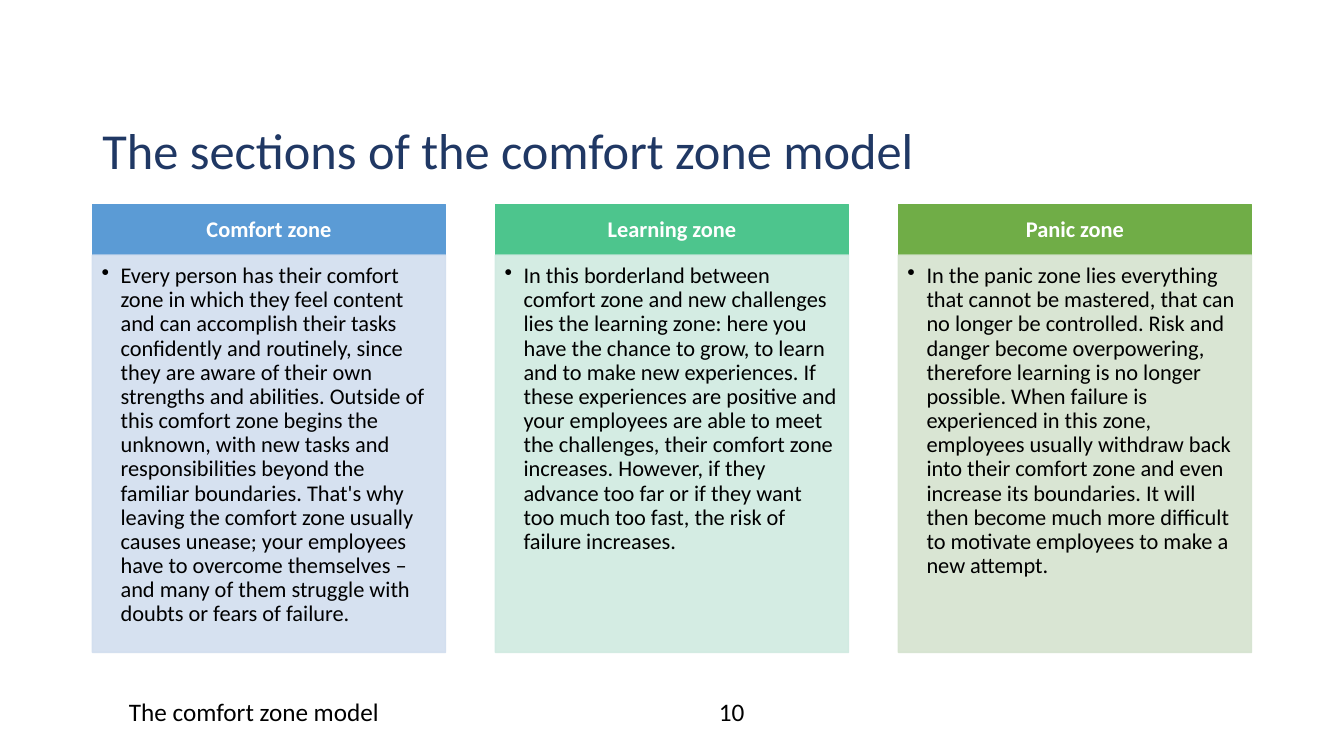
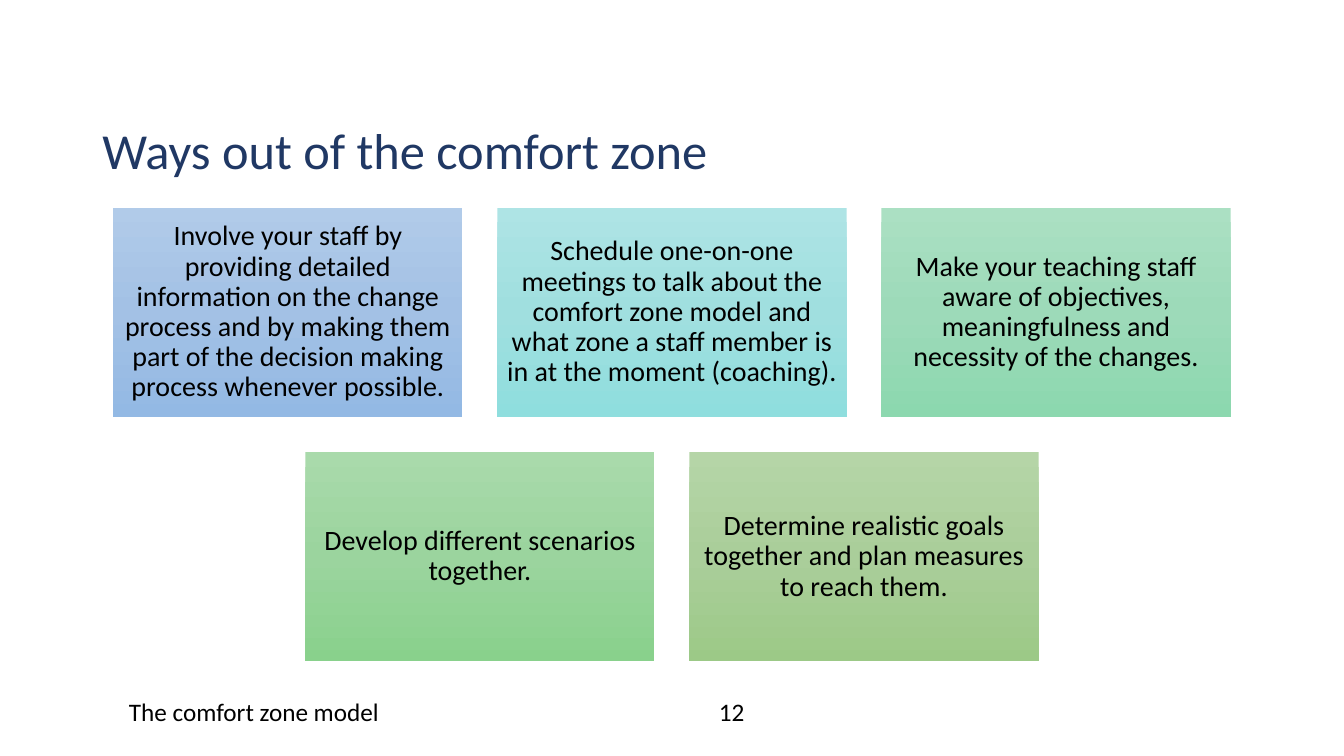
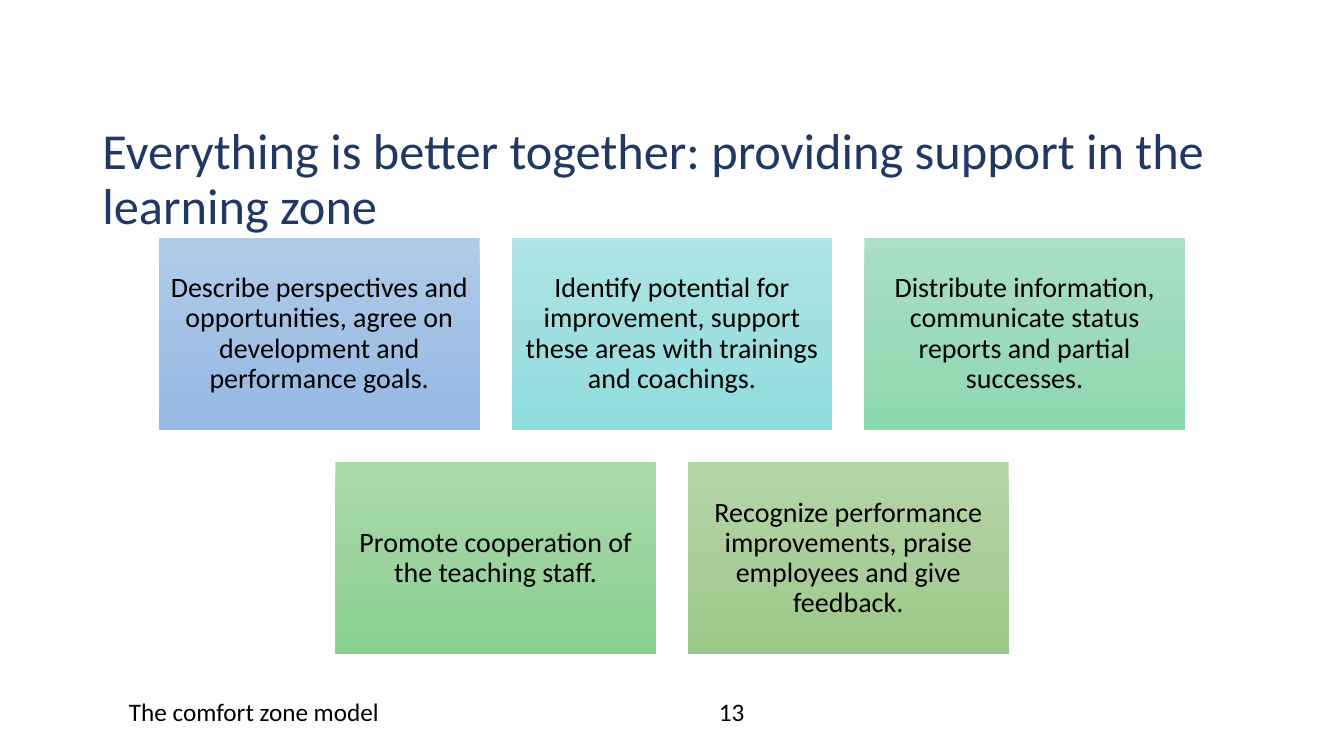
import copy

import pptx
import pptx.dml.color
import pptx.enum.shapes
import pptx.enum.text
import pptx.oxml.ns
import pptx.oxml.xmlchemy
import pptx.util

Cm, Pt = pptx.util.Cm, pptx.util.Pt
ALIGN, ANCHOR = pptx.enum.text.PP_ALIGN, pptx.enum.text.MSO_ANCHOR
qn = pptx.oxml.ns.qn

# Content
FOOTER = "The comfort zone model"
ZONES = [
    ("Comfort zone", "blue", "pale blue",
     "Every person has their comfort zone in which they feel content and can "
     "accomplish their tasks confidently and routinely, since they are aware of "
     "their own strengths and abilities. Outside of this comfort zone begins the "
     "unknown, with new tasks and responsibilities beyond the familiar boundaries. "
     "That's why leaving the comfort zone usually causes unease; your employees "
     "have to overcome themselves – and many of them struggle with doubts or "
     "fears of failure."),
    ("Learning zone", "mint", "pale mint",
     "In this borderland between comfort zone and new challenges lies the learning "
     "zone: here you have the chance to grow, to learn and to make new experiences. "
     "If these experiences are positive and your employees are able to meet the "
     "challenges, their comfort zone increases. However, if they advance too far or "
     "if they want too much too fast, the risk of failure increases."),
    ("Panic zone", "green", "pale green",
     "In the panic zone lies everything that cannot be mastered, that can no longer "
     "be controlled. Risk and danger become overpowering, therefore learning is no "
     "longer possible. When failure is experienced in this zone, employees usually "
     "withdraw back into their comfort zone and even increase its boundaries. It "
     "will then become much more difficult to motivate employees to make a new "
     "attempt."),
]
WAYS = [
    "Involve your staff by providing detailed information on the change process and "
    "by making them part of the decision making process whenever possible.",
    "Schedule one-on-one meetings to talk about the comfort zone model and what zone "
    "a staff member is in at the moment (coaching).",
    "Make your teaching staff aware of objectives, meaningfulness and necessity of "
    "the changes.",
    "Develop different scenarios together.",
    "Determine realistic goals together and plan measures to reach them.",
]
HELP = [
    "Describe perspectives and opportunities, agree on development and performance "
    "goals.",
    "Identify potential for improvement, support these areas with trainings and "
    "coachings.",
    "Distribute information, communicate status reports and partial successes.",
    "Promote cooperation of the teaching staff.",
    "Recognize performance improvements, praise employees and give feedback.",
]
# Title, page number, tile texts, top and tile width in cm
TILED = [
    ("Ways out of the comfort zone", 12, WAYS, 5.23, 8.8),
    ("Everything is better together: providing support in the learning zone", 13,
     HELP, 5.99, 8.08),
]

# Shared style
COLORS = {
    "navy": "203864", "black": "000000", "white": "FFFFFF",
    "blue": "5B9BD5", "mint": "4DC58D", "green": "70AD47",
    "pale blue": "D2DEEF", "pale mint": "D0EAE1", "pale green": "D5E3CF",
}
SHADES = [
    ("B1CBE9", "A3C1E5", "93B9E4"),
    ("AEE4E5", "A0DFDF", "8FDEDE"),
    ("ABE0C3", "9DDAB9", "8CD8AF"),
    ("A9DAAB", "9BD49E", "89D18C"),
    ("B5D5A7", "AACE9A", "9CC987"),
]
WIDE, HIGH = 33.87, 19.05
LEFT, SPAN = 2.33, 29.21


def tint(name):
    return pptx.dml.color.RGBColor.from_string(COLORS.get(name, name))


def apply(thing, vals):
    for key, val in vals.items():
        setattr(thing, key, val)


def add_node(owner, tag, key, val):
    node = pptx.oxml.xmlchemy.OxmlElement(tag)
    node.set(key, val)
    owner.append(node)


def write(shape, text, size, color="black", align=ALIGN.LEFT, anchor=ANCHOR.TOP,
          pads=(0.25, 0.13, 0.25, 0.13), space=0.9, bold=False, bullet=False):
    frame = shape.text_frame
    frame.text = text
    sides = ("margin_left", "margin_top", "margin_right", "margin_bottom")
    apply(frame, dict(zip(sides, map(Cm, pads))))
    apply(frame, {"word_wrap": True, "vertical_anchor": anchor,
                  "auto_size": pptx.enum.text.MSO_AUTO_SIZE.NONE})
    para = frame.paragraphs[0]
    apply(para, {"alignment": align, "line_spacing": space})
    if bullet:
        props = para._p.get_or_add_pPr()
        props.set("marL", str(int(Cm(0.48))))
        props.set("indent", str(-int(Cm(0.48))))
        add_node(props, "a:buChar", "char", "•")
    font = para.runs[0].font
    apply(font, {"name": "Calibri", "size": Pt(size), "bold": bold})
    font.color.rgb = tint(color)


def add_page(deck, title, number):
    slide = deck.slides.add_slide(deck.slide_layouts[5])
    head = slide.shapes.title
    apply(head, {"left": Cm(LEFT), "top": Cm(3.05),
                 "width": Cm(SPAN), "height": Cm(2.46)})
    write(head, title, 36, "navy")
    for text, left, width, align in ((FOOTER, 3, 11.43, ALIGN.LEFT),
                                     (str(number), 14.63, 7.62, ALIGN.CENTER)):
        box = slide.shapes.add_textbox(Cm(left), Cm(17.42), Cm(width), Cm(1.02))
        write(box, text, 18, align=align, space=1)
    return slide


def add_rect(slide, left, top, width, height):
    kind = pptx.enum.shapes.MSO_SHAPE.RECTANGLE
    rect = slide.shapes.add_shape(kind, Cm(left), Cm(top), Cm(width), Cm(height))
    rect.shadow.inherit = False
    return rect


def paint(rect, color, alpha=100):
    rect.fill.solid()
    rect.fill.fore_color.rgb = tint(color)
    rect.line.color.rgb = tint(color)
    rect.line.width = Pt(1)
    if alpha < 100:
        for node in rect.element.spPr.findall(".//" + qn("a:srgbClr")):
            add_node(node, "a:alpha", "val", str(alpha * 1000))


def shade(rect, colors):
    rect.line.fill.background()
    rect.fill.gradient()
    rect.fill.gradient_angle = 270
    stops = rect.element.spPr.find(".//" + qn("a:gsLst"))
    stops.insert(1, copy.deepcopy(stops[0]))
    stops[1].set("pos", "50000")
    for stop, color in zip(rect.fill.gradient_stops, colors):
        stop.color.rgb = tint(color)


def add_zones(slide):
    top, width, band, body = 5.16, 8.9, 1.27, 10.01
    step = (SPAN - width) / (len(ZONES) - 1)
    for col, (name, dark, pale, text) in enumerate(ZONES):
        left = LEFT + col * step
        head = add_rect(slide, left, top, width, band)
        paint(head, dark)
        write(head, name, 16, "white", ALIGN.CENTER, ANCHOR.MIDDLE,
              (0.3, 0.18, 0.3, 0.18), bold=True)
        panel = add_rect(slide, left, top + band, width, body)
        paint(panel, pale, 90)
        write(panel, text, 16, pads=(0.23, 0.23, 0.3, 0.36), bullet=True)


def add_tiles(slide, texts, top, width):
    height, gap, cols = width * 0.6, width * 0.1, 3
    for num, text in enumerate(texts):
        row, col = divmod(num, cols)
        count = min(cols, len(texts) - row * cols)
        start = (WIDE - count * width - (count - 1) * gap) / 2
        tile = add_rect(slide, start + col * (width + gap),
                        top + row * (height + gap), width, height)
        shade(tile, SHADES[num])
        write(tile, text, 20, align=ALIGN.CENTER, anchor=ANCHOR.MIDDLE,
              pads=(0.2,) * 4)


def main():
    deck = pptx.Presentation()
    apply(deck, {"slide_width": Cm(WIDE), "slide_height": Cm(HIGH)})
    add_zones(add_page(deck, "The sections of the comfort zone model", 10))
    for title, number, texts, top, width in TILED:
        add_tiles(add_page(deck, title, number), texts, top, width)
    deck.save("out.pptx")


if __name__ == "__main__":
    main()
